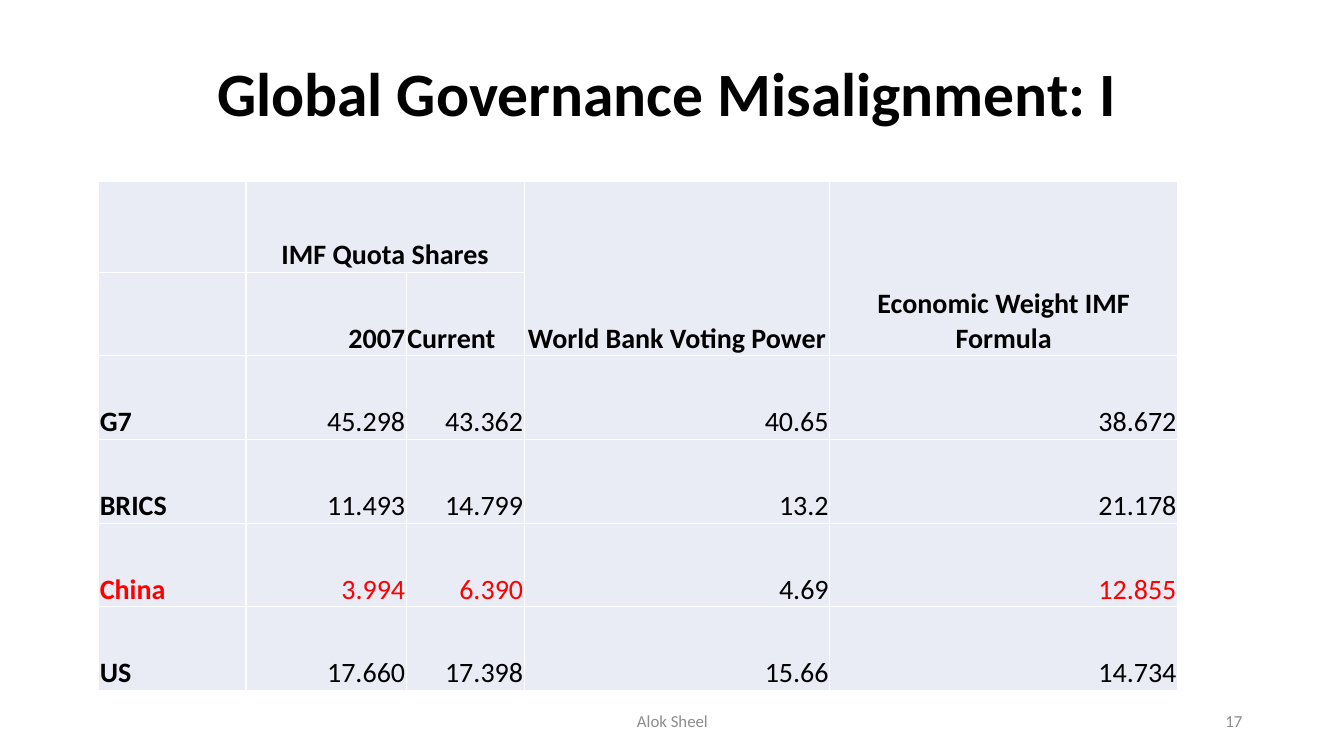
from lxml import etree
from pptx import Presentation
from pptx.dml.color import RGBColor
from pptx.enum.text import MSO_ANCHOR, PP_ALIGN
from pptx.oxml.ns import qn
from pptx.util import Inches, Pt

LEFT, CENTER, RIGHT = PP_ALIGN.LEFT, PP_ALIGN.CENTER, PP_ALIGN.RIGHT
MIDDLE, BOTTOM = MSO_ANCHOR.MIDDLE, MSO_ANCHOR.BOTTOM
FONT = "Calibri"
COLORS = {
    "text": "000000",
    "highlight": "FF0000",
    "footer": "8C8C8C",
    "cell": "E9EBF5",
    "border": "FFFFFF",
}


def style_paragraph(para, size, color, align, bold=False):
    para.alignment = align
    para.font.name = FONT
    para.font.size = Pt(size)
    para.font.bold = bold
    para.font.color.rgb = RGBColor.from_string(COLORS[color])


def add_borders(cell):
    """Draw a 1 pt line on each side; call before the cell's fill is set."""
    properties = cell._tc.get_or_add_tcPr()
    for side in ("a:lnL", "a:lnR", "a:lnT", "a:lnB"):
        line = etree.SubElement(properties, qn(side), w=str(Pt(1)))
        fill = etree.SubElement(line, qn("a:solidFill"))
        etree.SubElement(fill, qn("a:srgbClr"), val=COLORS["border"])


deck = Presentation()
deck.slide_width, deck.slide_height = Inches(13.33), Inches(7.5)
page = deck.slides.add_slide(deck.slide_layouts[6])

# Title and footer
text_boxes = [
    ("Global Governance Misalignment: I", (0.87, 0.23, 11.5, 1.45), 44, "text", CENTER, True),
    ("Alok Sheel", (4.42, 6.95, 4.5, 0.4), 12, "footer", CENTER, False),
    ("17", (9.42, 6.95, 3, 0.4), 12, "footer", RIGHT, False),
]
for text, place, size, color, align, bold in text_boxes:
    box = page.shapes.add_textbox(*map(Inches, place))
    frame = box.text_frame
    frame.word_wrap = True
    frame.vertical_anchor = MIDDLE
    para = frame.paragraphs[0]
    para.text = text
    para.line_spacing = 0.9 if size == 44 else 1.0
    style_paragraph(para, size, color, align, bold)

# Table of shares
column_widths = [1.46, 1.59, 1.17, 3.03, 3.45]
row_heights = [0.9] + [0.83] * 5
rows = [
    ["", "IMF Quota Shares", "", "World Bank Voting Power", "Economic Weight IMF Formula"],
    ["", "2007", "Current", "", ""],
    ["G7", "45.298", "43.362", "40.65", "38.672"],
    ["BRICS", "11.493", "14.799", "13.2", "21.178"],
    ["China", "3.994", "6.390", "4.69", "12.855"],
    ["US", "17.660", "17.398", "15.66", "14.734"],
]
highlighted = {"China", "3.994", "6.390", "12.855"}

table = page.shapes.add_table(
    len(rows), len(column_widths), Inches(0.98), Inches(1.8),
    Inches(sum(column_widths)), Inches(sum(row_heights)),
).table
table.first_row = table.horz_banding = False
for column, width in zip(table.columns, column_widths):
    column.width = Inches(width)
for row, height in zip(table.rows, row_heights):
    row.height = Inches(height)

for row_index, values in enumerate(rows):
    for column_index, value in enumerate(values):
        cell = table.cell(row_index, column_index)
        add_borders(cell)
        cell.fill.solid()
        cell.fill.fore_color.rgb = RGBColor.from_string(COLORS["cell"])
        cell.vertical_anchor = BOTTOM
        cell.margin_left = cell.margin_right = cell.margin_top = Inches(0.01)
        cell.margin_bottom = 0
        if row_index == 0:
            align = CENTER
        elif column_index == 0 or value == "Current":
            align = LEFT
        else:
            align = RIGHT
        para = cell.text_frame.paragraphs[0]
        para.text = value
        color = "highlight" if value in highlighted else "text"
        style_paragraph(para, 20, color, align, row_index < 2 or column_index == 0)

table.cell(0, 1).merge(table.cell(0, 2))
for column_index in (3, 4):
    table.cell(0, column_index).merge(table.cell(1, column_index))

deck.save("out.pptx")
